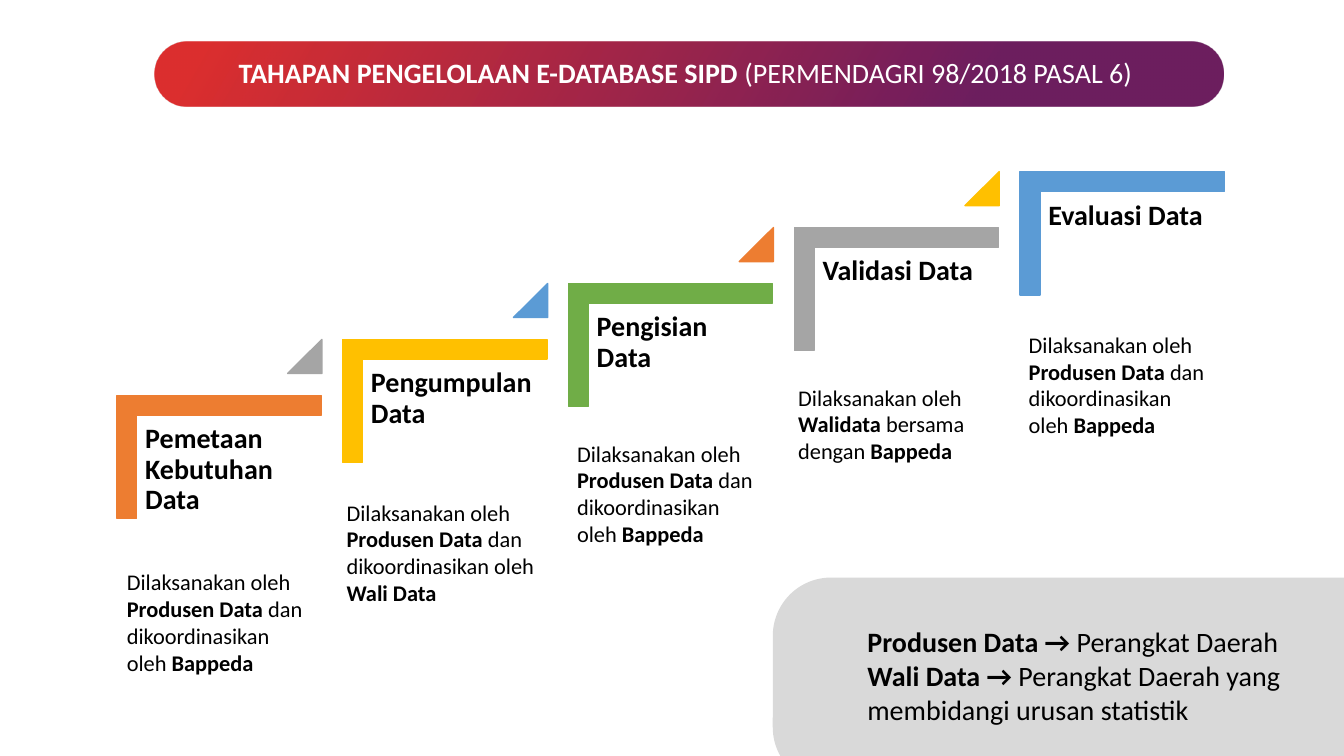
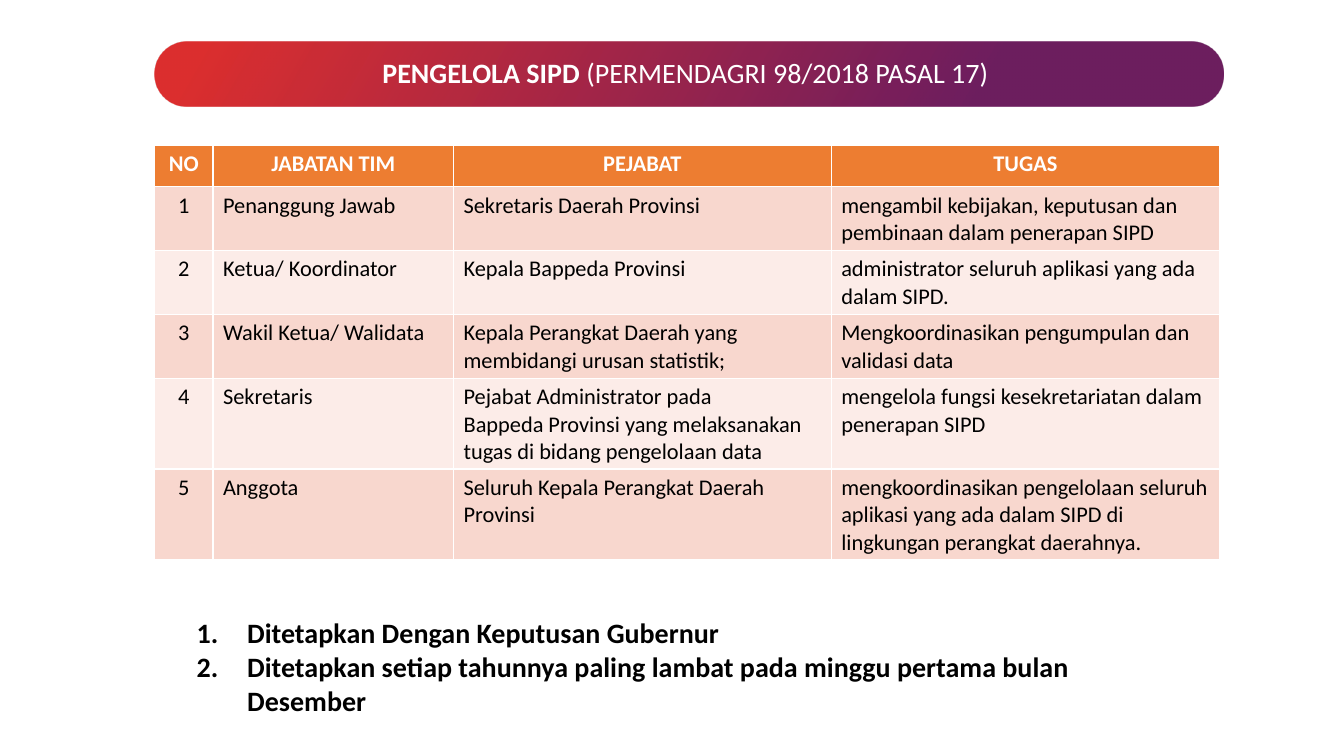
from lxml import etree
from pptx import Presentation
from pptx import util as u
from pptx.dml.color import RGBColor
from pptx.enum import shapes, text
from pptx.oxml import ns

COLORS = {
    "red": "D71414", "purple": "5A004B", "orange": "ED7D31", "yellow": "FFC000",
    "green": "70AD47", "gray": "A5A5A5", "blue": "5B9BD5", "panel": "D9D9D9",
    "band_dark": "F8D7CE", "band_light": "FCECE8", "white": "FFFFFF", "black": "000000",
}
RGB = {name: RGBColor.from_string(value) for name, value in COLORS.items()}

presentation = Presentation()
presentation.slide_width = u.Inches(13.33)
presentation.slide_height = u.Inches(7.5)


def place(left, top, width, height):
    across = presentation.slide_width / 100
    down = presentation.slide_height / 100
    return [round(left * across), round(top * down), round(width * across), round(height * down)]


def write(frame, content, size=20, color="black", bold=False, align=text.PP_ALIGN.LEFT,
          spacing=None, inset=None, numbered=False):
    frame.word_wrap = True
    if inset is not None:
        frame.margin_left = frame.margin_right = u.Inches(inset)
        frame.margin_top = frame.margin_bottom = u.Inches(inset)
    for index, line in enumerate(content.split("\n")):
        paragraph = frame.add_paragraph() if index else frame.paragraphs[0]
        paragraph.alignment = align
        if spacing:
            paragraph.line_spacing = spacing
        if numbered:
            properties = paragraph._p.get_or_add_pPr()
            properties.set("marL", str(u.Inches(0.5)))
            properties.set("indent", str(u.Inches(-0.5)))
            etree.SubElement(properties, ns.qn("a:buFont"), typeface="+mj-lt")
            etree.SubElement(properties, ns.qn("a:buAutoNum"), type="arabicPeriod")
        for position, piece in enumerate(line.split("**")):
            if piece:
                run = paragraph.add_run()
                run.text = piece
                run.font.name = "Calibri"
                run.font.size = u.Pt(size)
                run.font.bold = bold or position % 2 == 1
                run.font.color.rgb = RGB[color]


titles = [
    "**TAHAPAN PENGELOLAAN E-DATABASE SIPD **(PERMENDAGRI 98/2018 PASAL 6)",
    "**PENGELOLA SIPD **(PERMENDAGRI 98/2018 PASAL 17)",
]
slides = []
for title in titles:
    slide = presentation.slides.add_slide(presentation.slide_layouts[6])
    slides.append(slide)
    band = slide.shapes.add_shape(shapes.MSO_SHAPE.ROUNDED_RECTANGLE, *place(11.5, 5.5, 79.5, 8.6))
    band.adjustments[0] = 0.5
    band.shadow.inherit = False
    band.line.fill.background()
    band.fill.gradient()
    band.fill.gradient_angle = 330
    for stop, position, name in zip(band.fill.gradient_stops, (0.05, 0.77), ("red", "purple")):
        stop.position = position
        stop.color.rgb = RGB[name]
    for color in band.element.spPr.iter(ns.qn("a:srgbClr")):
        etree.SubElement(color, ns.qn("a:alpha"), val="88000")
    heading = slide.shapes.add_textbox(*place(11.25, 6.7, 79.5, 5.9))
    write(heading.text_frame, title, color="white", align=text.PP_ALIGN.CENTER)

stages_slide, team_slide = slides

COLUMN, RISE = 16.8, 7.4
produced = "Dilaksanakan oleh **Produsen Data **dan dikoordinasikan oleh "
stages = [
    ("Pemetaan Kebutuhan Data", "orange", "gray", produced + "**Bappeda**", (8.7, 74.5, 15.3, 15.7)),
    ("Pengumpulan Data", "yellow", "blue", produced + "**Wali Data**", (25.05, 65.3, 16.1, 15.7)),
    ("Pengisian Data", "green", "orange", produced + "**Bappeda**", (42.2, 57.5, 15.2, 15.7)),
    ("Validasi Data", "gray", "yellow",
     "Dilaksanakan oleh **Walidata** bersama dengan **Bappeda**", (58.65, 50.1, 15, 12.1)),
    ("Evaluasi Data", "blue", None, produced + "**Bappeda**", (75.8, 43.1, 15.1, 15.7)),
]
for index, (name, corner_color, triangle_color, duty, duty_area) in enumerate(stages):
    across, up = index * COLUMN, index * RISE
    left, top, width, height = place(8.7 + across, 52.3 - up, 15.2, 16.3)
    shift = (width - height) // 2
    corner = stages_slide.shapes.add_shape(
        shapes.MSO_SHAPE.CORNER, left + shift, top - shift, height, width)
    corner.rotation = 90
    corner.adjustments[0] = corner.adjustments[1] = 0.16
    marks = [(corner, corner_color)]
    if triangle_color:
        triangle = stages_slide.shapes.add_shape(
            shapes.MSO_SHAPE.ISOSCELES_TRIANGLE, *place(21.4 + across, 44.9 - up, 2.55, 4.5))
        triangle.adjustments[0] = 1
        marks.append((triangle, triangle_color))
    for shape, color in marks:
        shape.shadow.inherit = False
        shape.fill.solid()
        shape.fill.fore_color.rgb = RGB[color]
        shape.line.color.rgb = RGB[color]
        shape.line.width = u.Pt(1)
    label = stages_slide.shapes.add_textbox(*place(10.2 + across, 55.1 - up, 13.7, 21.3))
    write(label.text_frame, name, bold=True, spacing=0.9, inset=0.08)
    description = stages_slide.shapes.add_textbox(*place(*duty_area))
    write(description.text_frame, duty, size=16)

panel = stages_slide.shapes.add_shape(
    shapes.MSO_SHAPE.ROUNDED_RECTANGLE, *place(57.5, 76.4, 47.5, 27.5))
panel.adjustments[0] = 0.28
panel.shadow.inherit = False
panel.fill.solid()
panel.fill.fore_color.rgb = RGB["panel"]
panel.line.fill.background()
legend = stages_slide.shapes.add_textbox(*place(63.8, 82, 34.2, 14.8))
write(legend.text_frame, "**Produsen Data → **Perangkat Daerah\n"
      "**Wali Data → **Perangkat Daerah yang membidangi urusan statistik")

team = [
    ("NO", "JABATAN TIM", "PEJABAT", "TUGAS"),
    ("1", "Penanggung Jawab", "Sekretaris Daerah Provinsi",
     "mengambil kebijakan, keputusan dan pembinaan dalam penerapan SIPD"),
    ("2", "Ketua/ Koordinator", "Kepala Bappeda Provinsi",
     "administrator seluruh aplikasi yang ada\ndalam SIPD."),
    ("3", "Wakil Ketua/ Walidata", "Kepala Perangkat Daerah yang membidangi urusan statistik;",
     "Mengkoordinasikan pengumpulan dan validasi data"),
    ("4", "Sekretaris", "Pejabat Administrator pada\n"
     "Bappeda Provinsi yang melaksanakan tugas di bidang pengelolaan data",
     "mengelola fungsi kesekretariatan dalam penerapan SIPD"),
    ("5", "Anggota", "Seluruh Kepala Perangkat Daerah Provinsi",
     "mengkoordinasikan pengelolaan seluruh aplikasi yang ada dalam SIPD di "
     "lingkungan perangkat daerahnya."),
]
column_shares = (4.35, 17.9, 28.1, 28.9)
table = team_slide.shapes.add_table(
    len(team), len(column_shares), *place(11.5, 19.2, sum(column_shares), 5.5 * len(team))).table
for column, share in zip(table.columns, column_shares):
    column.width = place(0, 0, share, 0)[2]
for row, values in enumerate(team):
    header = row == 0
    fill = "orange" if header else ("band_light", "band_dark")[row % 2]
    for column, value in enumerate(values):
        cell = table.cell(row, column)
        cell.fill.solid()
        cell.fill.fore_color.rgb = RGB[fill]
        centered = header or column == 0
        write(cell.text_frame, value, size=16, bold=header,
              color="white" if header else "black",
              align=text.PP_ALIGN.CENTER if centered else text.PP_ALIGN.LEFT)

decrees = team_slide.shapes.add_textbox(*place(13.9, 80.8, 74.3, 14.8))
write(decrees.text_frame, "Ditetapkan Dengan Keputusan Gubernur\n"
      "Ditetapkan setiap tahunnya paling lambat pada minggu pertama bulan Desember",
      bold=True, numbered=True)

presentation.save("out.pptx")
